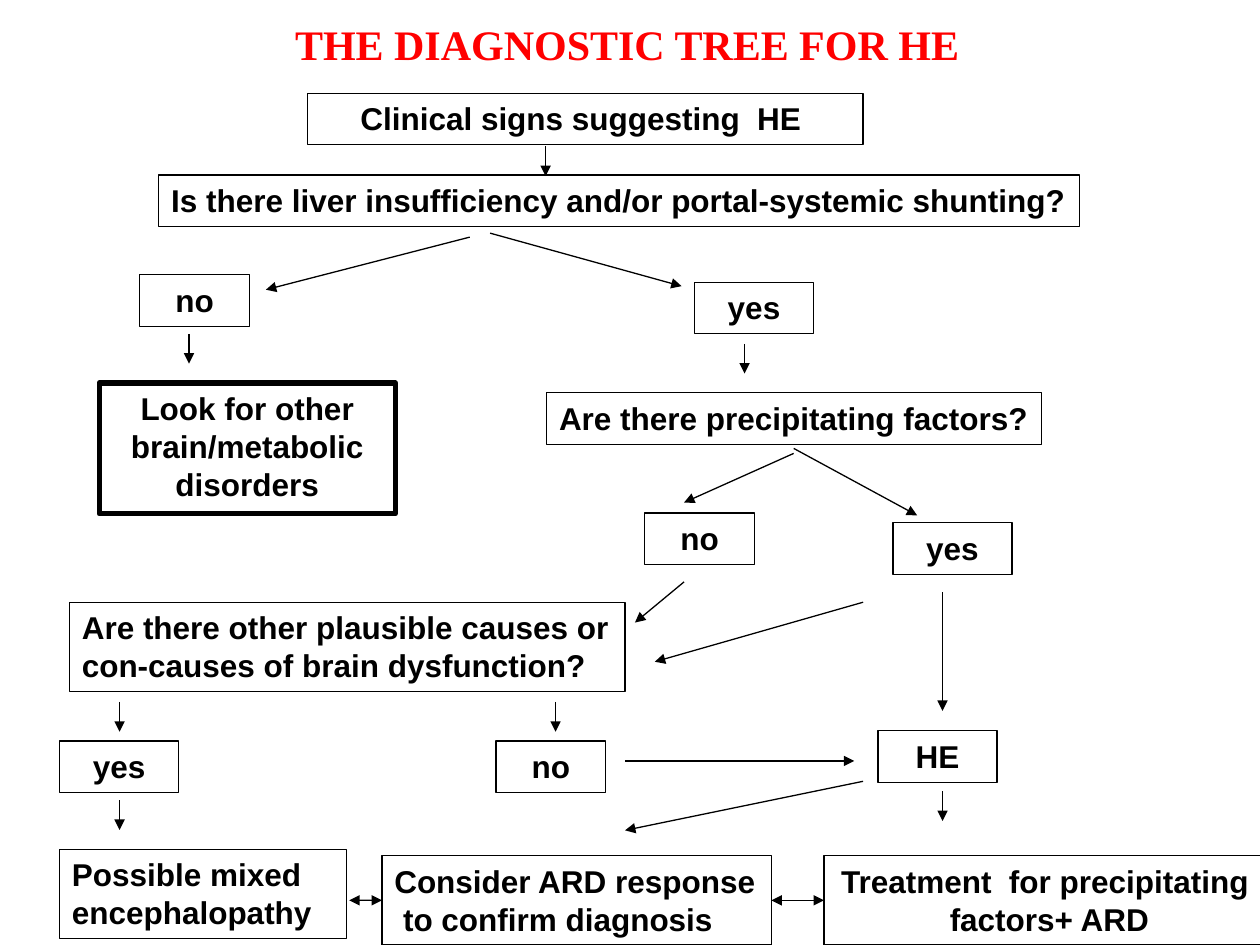
from dataclasses import dataclass

from lxml import etree
from pptx import Presentation
from pptx.dml.color import RGBColor
from pptx.enum.shapes import MSO_CONNECTOR, MSO_SHAPE
from pptx.enum.text import MSO_ANCHOR, MSO_AUTO_SIZE, PP_ALIGN
from pptx.oxml.ns import qn
from pptx.util import Cm, Pt

RECT = MSO_SHAPE.RECTANGLE
LINE = MSO_CONNECTOR.STRAIGHT
TOP = MSO_ANCHOR.TOP
GROW = MSO_AUTO_SIZE.SHAPE_TO_FIT_TEXT
LEFT = PP_ALIGN.LEFT
MID = PP_ALIGN.CENTER
WEST, EAST = 1, 3


@dataclass
class Theme:
    ink: RGBColor = RGBColor(0, 0, 0)
    red: RGBColor = RGBColor(255, 0, 0)
    head: str = "Times New Roman"
    body: str = "Arial"
    big: Pt = Pt(24)
    base: Pt = Pt(18)
    thin: Pt = Pt(0.75)
    thick: Pt = Pt(3)


class Chart:
    def __init__(self, slide, theme):
        self.slide = slide
        self.theme = theme

    def label(self, shape, text, align, name, size, color, wrap=True):
        frame = shape.text_frame
        frame.word_wrap = wrap
        frame.auto_size = GROW
        frame.vertical_anchor = TOP
        para = frame.paragraphs[0]
        para.text = text
        para.alignment = align
        font = para.font
        font.name, font.size, font.bold = name, size, True
        font.color.rgb = color

    def title(self, text, x, y, w, h):
        shape = self.slide.shapes.add_textbox(Cm(x), Cm(y), Cm(w), Cm(h))
        look = self.theme
        self.label(shape, text, MID, look.head, look.big, look.red)

    def box(self, text, x, y, w, h=1.04, align=MID, wrap=True, line=None):
        shape = self.slide.shapes.add_shape(RECT, Cm(x), Cm(y), Cm(w), Cm(h))
        look = self.theme
        shape.shadow.inherit = False
        shape.fill.background()
        shape.line.color.rgb = look.ink
        shape.line.width = line or look.thin
        self.label(shape, text, align, look.body, look.base, look.ink, wrap)
        return shape

    def arrow(self, x1, y1, x2, y2, both=False):
        link = self.slide.shapes.add_connector(
            LINE, Cm(x1), Cm(y1), Cm(x2), Cm(y2))
        link.line.color.rgb = self.theme.ink
        link.line.width = self.theme.thin
        props = link._element.spPr
        pen = props.find(qn("a:ln"))
        for tag in ("a:headEnd", "a:tailEnd") if both else ("a:tailEnd",):
            etree.SubElement(pen, qn(tag), type="triangle")
        etree.SubElement(props, qn("a:effectLst"))
        return link


def main():
    deck = Presentation()
    deck.slide_width, deck.slide_height = Cm(25.4), Cm(19.05)
    theme = Theme()
    tree = Chart(deck.slides.add_slide(deck.slide_layouts[6]), theme)

    tree.title("THE DIAGNOSTIC TREE FOR HE", 1.09, 0.25, 23.11, 1.27)

    tree.box("Clinical signs suggesting  HE ", 6.2, 1.88, 11.2)
    tree.box("Is there liver insufficiency and/or portal-systemic shunting?",
             3.2, 3.53, 18.57, align=LEFT, wrap=False)
    tree.box("Are there precipitating factors?",
             11.02, 7.92, 9.98, align=LEFT, wrap=False)
    tree.box("Look for other brain/metabolic disorders",
             2, 7.72, 5.97, 2.64, line=theme.thick)
    tree.box("Are there other plausible causes or "
             "con-causes of brain dysfunction?",
             1.4, 12.14, 11.2, 1.8, LEFT)

    for x, y in ((2.82, 5.54), (13, 10.34), (10, 14.94)):
        tree.box("no", x, y, 2.21)
    for x, y in ((14, 5.69), (18, 10.54), (1.2, 14.94)):
        tree.box("yes", x, y, 2.4)
    tree.box("HE", 17.7, 14.73, 2.4)

    tree.box("Possible mixed encephalopathy", 1.2, 17.12, 5.79, 1.8, LEFT)
    test = tree.box("Consider ARD response\n to confirm diagnosis",
                    7.7, 17.25, 7.85, 1.8, LEFT, False)
    treat = tree.box("Treatment  for precipitating \nfactors+ ARD",
                     16.61, 17.25, 9.09, 1.8)

    drops = ((11, 2.95), (3.81, 6.73), (15.01, 6.93), (2.41, 14.15),
             (11.2, 14.15), (2.41, 16.13), (19, 15.95))
    for x, y in drops:
        tree.arrow(x, y, x, y + 0.6)

    links = ((9.47, 4.78, 5.36, 5.84), (9.88, 4.7, 13.74, 5.77),
             (16, 9.14, 13.79, 10.13), (16, 9.04, 18.49, 10.39),
             (13.79, 11.73, 12.8, 12.55), (17.4, 12.14, 13.2, 13.34),
             (19, 11.94, 19, 14.33), (12.6, 15.34, 17.22, 15.34),
             (17.4, 15.75, 12.6, 16.74))
    for ends in links:
        tree.arrow(*ends)

    link = tree.arrow(7.7, 18.15, 7.04, 18.15, both=True)
    link.begin_connect(test, WEST)
    link = tree.arrow(16.61, 18.15, 15.55, 18.15, both=True)
    link.begin_connect(treat, WEST)
    link.end_connect(test, EAST)

    deck.save("out.pptx")


if __name__ == "__main__":
    main()
